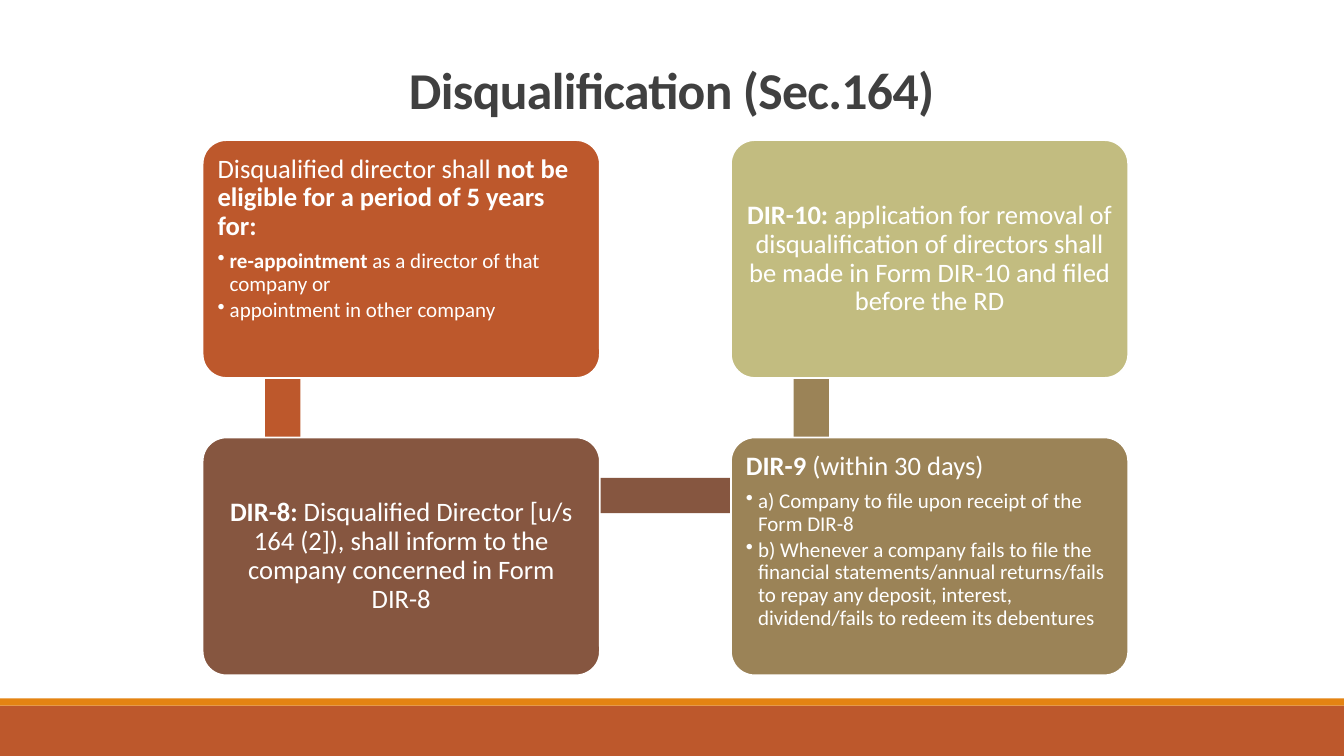
import pptx
import pptx.util
import pptx.dml.color
import pptx.enum.shapes
import pptx.enum.text
import lxml.etree
from pptx.util import Inches

RGBColor = pptx.dml.color.RGBColor
Shape = pptx.enum.shapes.MSO_SHAPE
Anchor = pptx.enum.text.MSO_ANCHOR
Align = pptx.enum.text.PP_ALIGN

WHITE = RGBColor(0xFF, 0xFF, 0xFF)
CHARCOAL = RGBColor(0x40, 0x40, 0x40)
ORANGE = RGBColor(0xE4, 0x83, 0x12)
RUST = RGBColor(0xBD, 0x58, 0x2C)
BROWN = RGBColor(0x86, 0x56, 0x40)
KHAKI = RGBColor(0x9B, 0x83, 0x57)
SAGE = RGBColor(0xC2, 0xBC, 0x80)

SLIDE_WIDTH, SLIDE_HEIGHT = 13.33, 7.5
CARD_WIDTH, CARD_HEIGHT = 3.94, 2.36
COLUMNS = (2.01, 7.25)
ROWS = (1.39, 4.34)
BAR = 0.35


def write_text(para, spans, size, color=WHITE, align=Align.LEFT,
               line_spacing=0.9, space_after=0, tracking=None):
    """Fill a paragraph with (text, bold) spans in one format."""
    para.alignment = align
    para.line_spacing = line_spacing
    para.space_before = pptx.util.Pt(0)
    para.space_after = pptx.util.Pt(space_after)
    for text, bold in spans:
        span = para.add_run()
        span.text = text
        span.font.name = "Calibri"
        span.font.size = pptx.util.Pt(size)
        span.font.bold = bold
        span.font.color.rgb = color
        if tracking is not None:
            span.font._element.set("spc", str(int(tracking * 100)))


def add_bullet(para, indent=0.12):
    properties = para._p.get_or_add_pPr()
    properties.set("marL", str(Inches(indent)))
    properties.set("indent", str(-Inches(indent)))
    bullet = lxml.etree.SubElement(properties, pptx.oxml.ns.qn("a:buChar"))
    bullet.set("char", "•")


class SlideBuilder:
    heading_size = 19
    bullet_size = 15
    inset = Inches(0.08)

    def __init__(self, deck):
        self.page = deck.slides.add_slide(deck.slide_layouts[5])

    def title(self, text, left, top, width, height):
        box = self.page.shapes.title
        box.left, box.top = Inches(left), Inches(top)
        box.width, box.height = Inches(width), Inches(height)
        frame = box.text_frame
        frame.auto_size = pptx.enum.text.MSO_AUTO_SIZE.NONE
        frame.vertical_anchor = Anchor.MIDDLE
        write_text(frame.paragraphs[0], [(text, True)], 36.9, color=CHARCOAL,
                   align=Align.CENTER, line_spacing=0.85, tracking=-0.5)

    def block(self, left, top, width, height, color, kind=Shape.RECTANGLE):
        box = self.page.shapes.add_shape(
            kind, Inches(left), Inches(top), Inches(width), Inches(height))
        box.shadow.inherit = False
        box.fill.solid()
        box.fill.fore_color.rgb = color
        box.line.fill.background()
        return box

    def card(self, left, top, color, heading, bullets=()):
        box = self.block(left, top, CARD_WIDTH, CARD_HEIGHT, color,
                         Shape.ROUNDED_RECTANGLE)
        box.adjustments[0] = 0.1
        box.line.color.rgb = WHITE
        box.line.width = pptx.util.Pt(1.25)
        frame = box.text_frame
        frame.word_wrap = True
        frame.margin_left = frame.margin_right = self.inset
        frame.margin_top = frame.margin_bottom = self.inset
        # Cards with a list read from the top left, the others are centred
        frame.vertical_anchor = Anchor.TOP if bullets else Anchor.MIDDLE
        write_text(frame.paragraphs[0], heading, self.heading_size,
                   align=Align.LEFT if bullets else Align.CENTER,
                   space_after=6.65)
        for spans in bullets:
            para = frame.add_paragraph()
            para.level = 1
            write_text(para, spans, self.bullet_size, space_after=2.25)
            add_bullet(para)


def main():
    deck = pptx.Presentation()
    deck.slide_width = Inches(SLIDE_WIDTH)
    deck.slide_height = Inches(SLIDE_HEIGHT)
    slide = SlideBuilder(deck)

    # Footer bands and title
    slide.block(0, 7, SLIDE_WIDTH, 0.5, RUST)
    slide.block(0, 6.93, SLIDE_WIDTH, 0.07, ORANGE)
    slide.title("Disqualification (Sec.164)", 1.04, 0.67, 11.24, 0.51)

    # Bars that link the cards, running behind them
    for left, color in zip(COLUMNS, (RUST, KHAKI)):
        slide.block(left + 0.62, 1.97, BAR, 2.94, color)
    slide.block(2.81, 4.74, 5.22, BAR, BROWN)

    # Cards, in reading order along the bars
    slide.card(
        COLUMNS[0], ROWS[0], RUST,
        [("Disqualified director shall ", False),
         ("not be eligible for a period of 5 years for:", True)],
        [[("re-appointment ", True),
          ("as a director of that company or", False)],
         [("appointment in other company", False)]])
    slide.card(
        COLUMNS[0], ROWS[1], BROWN,
        [("DIR-8: ", True),
         ("Disqualified Director [u/s 164 (2]), shall inform to the company "
          "concerned in Form DIR-8", False)])
    slide.card(
        COLUMNS[1], ROWS[1], KHAKI,
        [("DIR-9 ", True), ("(within 30 days)", False)],
        [[("a) Company to file upon receipt of the Form DIR-8", False)],
         [("b) Whenever a company fails to file the financial "
           "statements/annual returns/fails to repay any deposit, interest, "
           "dividend/fails to redeem its debentures", False)]])
    slide.card(
        COLUMNS[1], ROWS[0], SAGE,
        [("DIR-10: ", True),
         ("application for removal of disqualification of directors shall be "
          "made in Form DIR-10 and filed before the RD", False)])

    deck.save("out.pptx")


if __name__ == "__main__":
    main()
